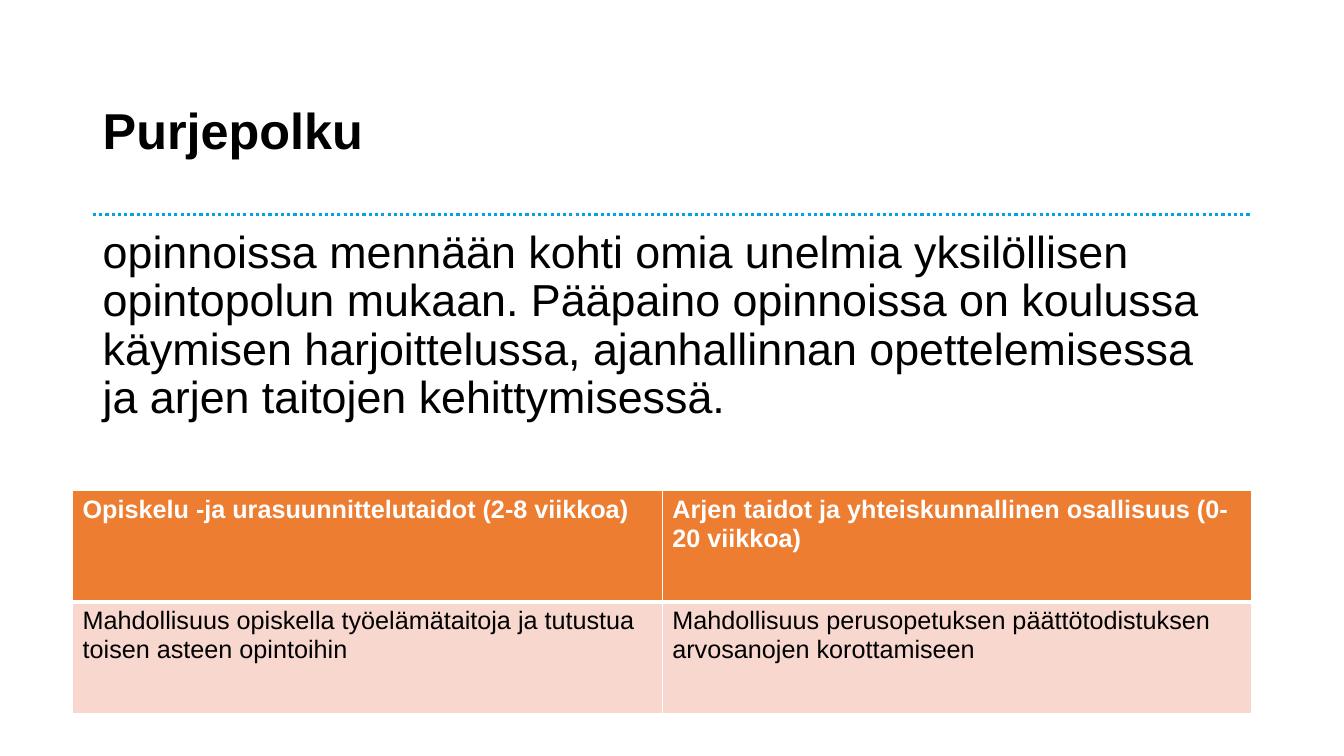
from lxml import etree
from pptx import Presentation
from pptx.dml.color import RGBColor
from pptx.enum import dml, shapes, text
from pptx.oxml import parse_xml
from pptx.oxml.ns import nsdecls, qn
from pptx.util import Cm, Pt


def color(value):
    return RGBColor.from_string(value)


def style(paragraph, size, value, bold=False):
    """Format every run of the paragraph in Arial."""
    for span in paragraph.runs:
        span.font.name = "Arial"
        span.font.size = Pt(size)
        span.font.bold = bold
        span.font.color.rgb = color(value)


deck = Presentation()
deck.slide_width, deck.slide_height = Cm(33.87), Cm(19.05)
page = deck.slides.add_slide(deck.slide_layouts[6])
left, width = Cm(2.34), Cm(29.21)

# Dotted rule under the title
rule = page.shapes.add_connector(
    shapes.MSO_CONNECTOR.STRAIGHT, left, Cm(5.41), left + width, Cm(5.41))
rule.line.color.rgb = color("00A4E4")
rule.line.width = Pt(2.25)
rule.line.dash_style = dml.MSO_LINE.ROUND_DOT
etree.SubElement(rule._element.spPr, qn("a:effectLst"))

# Title and introduction
introduction = (
    "opinnoissa mennään kohti omia unelmia yksilöllisen opintopolun mukaan. "
    "Pääpaino opinnoissa on koulussa käymisen harjoittelussa, ajanhallinnan "
    "opettelemisessa ja arjen taitojen kehittymisessä.")
text_blocks = [
    ("Purjepolku", 1.52, 3.68, text.MSO_ANCHOR.MIDDLE, 36, True),
    (introduction, 5.66, 10.59, text.MSO_ANCHOR.TOP, 32, False),
]
for wording, top, height, anchor, size, bold in text_blocks:
    box = page.shapes.add_textbox(left, Cm(top), width, Cm(height))
    frame = box.text_frame
    frame.word_wrap = True
    frame.vertical_anchor = anchor
    frame.text = wording
    frame.paragraphs[0].line_spacing = 0.9
    style(frame.paragraphs[0], size, "000000", bold)

# Table of study contents; borders are left, right, top, bottom in points
table_rows = [
    (("Opiskelu -ja urasuunnittelutaidot (2-8 viikkoa)",
      "Arjen taidot ja yhteiskunnallinen osallisuus (0-20 viikkoa)"),
     "ED7D31", "FFFFFF", True, (1, 1, 1, 3)),
    (("Mahdollisuus opiskella työelämätaitoja ja tutustua toisen asteen opintoihin",
      "Mahdollisuus perusopetuksen päättötodistuksen arvosanojen korottamiseen"),
     "F8D7CE", "000000", False, (1, 1, 3, 1)),
]
table = page.shapes.add_table(
    2, 2, Cm(1.83), Cm(12.37), Cm(29.72), Cm(5.6)).table
for row, (wordings, fill, ink, bold, borders) in enumerate(table_rows):
    for column, wording in enumerate(wordings):
        cell = table.cell(row, column)
        cell.text = wording
        style(cell.text_frame.paragraphs[0], 18, ink, bold)
        cell.fill.solid()
        cell.fill.fore_color.rgb = color(fill)
        properties = cell._tc.get_or_add_tcPr()
        for position, (side, points) in enumerate(zip("LRTB", borders)):
            properties.insert(position, parse_xml(
                f'<a:ln{side} {nsdecls("a")} w="{Pt(points)}"><a:solidFill>'
                f'<a:srgbClr val="FFFFFF"/></a:solidFill></a:ln{side}>'))

deck.save("out.pptx")
